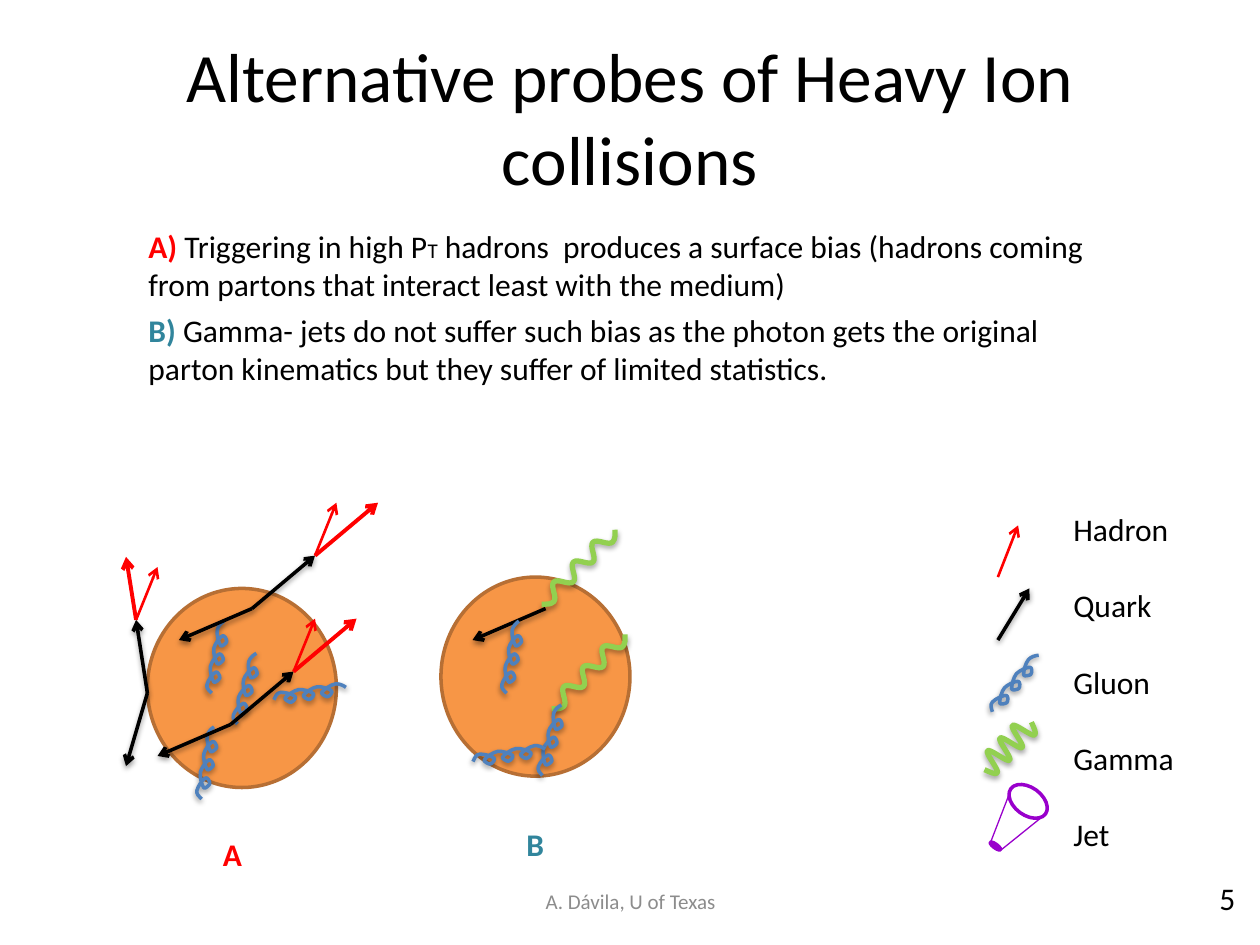
from lxml.etree import SubElement
from pptx import Presentation
from pptx.dml.color import RGBColor
from pptx.enum.shapes import MSO_CONNECTOR, MSO_SHAPE
from pptx.enum.text import MSO_ANCHOR, PP_ALIGN
from pptx.oxml.ns import qn
from pptx.util import Inches, Pt

BLACK = RGBColor(0x00, 0x00, 0x00)
RED = RGBColor(0xFF, 0x00, 0x00)
TEAL = RGBColor(0x31, 0x85, 0x9C)
GRAY = RGBColor(0x8C, 0x8C, 0x8C)
ORANGE = RGBColor(0xF7, 0x96, 0x46)
BROWN = RGBColor(0xB7, 0x6F, 0x34)
BLUE = RGBColor(0x4F, 0x81, 0xBD)
GREEN = RGBColor(0x92, 0xD0, 0x50)
PURPLE = RGBColor(0x99, 0x00, 0xCC)

FONT = "Calibri"
GLUON_LOOPS = 3
LOOP_WIDTH = 0.44 / GLUON_LOOPS
GAMMA_TILT = 314.6
JET_TILT = 36.2


def add_text(shapes, box, paragraphs, align=PP_ALIGN.LEFT,
             anchor=MSO_ANCHOR.TOP, gap=0):
    """Each paragraph is a list of (text, size, colour, bold) runs."""
    frame = shapes.add_textbox(*map(Inches, box)).text_frame
    frame.word_wrap = True
    frame.vertical_anchor = anchor
    for index, runs in enumerate(paragraphs):
        paragraph = frame.paragraphs[0] if index == 0 else frame.add_paragraph()
        paragraph.alignment = align
        if index:
            paragraph.space_before = Pt(gap)
        for text, size, color, bold in runs:
            run = paragraph.add_run()
            run.text = text
            font = run.font
            font.name, font.size, font.bold = FONT, Pt(size), bold
            font.color.rgb = color


def set_shadow(shape, opacity=0, distance=0):
    """Drop a soft shadow straight down, or none at zero opacity."""
    properties = shape._element.spPr
    for old in properties.findall(qn("a:effectLst")):
        properties.remove(old)
    effects = SubElement(properties, qn("a:effectLst"))
    if opacity:
        shadow = SubElement(effects, qn("a:outerShdw"), blurRad=str(Pt(3.1)),
                            dist=str(Pt(distance)), dir="5400000", rotWithShape="0")
        color = SubElement(shadow, qn("a:srgbClr"), val="000000")
        SubElement(color, qn("a:alpha"), val=str(opacity * 1000))


def add_line(shapes, start, end, color, width, arrow=True):
    line = shapes.add_connector(MSO_CONNECTOR.STRAIGHT, *map(Inches, start + end))
    line.line.color.rgb = color
    line.line.width = Pt(width)
    if arrow:
        SubElement(line.line._get_or_add_ln(), qn("a:tailEnd"), type="arrow")
    set_shadow(line)
    return line


def add_quark(shapes, start, end):
    set_shadow(add_line(shapes, start, end, BLACK, 2), 38, 1.6)


def add_hadron(shapes, start, end, width=1.5):
    add_line(shapes, start, end, RED, width)


def add_ellipse(shapes, box, color, fill=None, tilt=0):
    ellipse = shapes.add_shape(MSO_SHAPE.OVAL, *map(Inches, box))
    ellipse.shadow.inherit = False
    ellipse.rotation = tilt
    if fill is None:
        ellipse.fill.background()
    else:
        ellipse.fill.solid()
        ellipse.fill.fore_color.rgb = fill
    ellipse.line.color.rgb = color
    ellipse.line.width = Pt(2)


def add_curve(shapes, center, points, tilt, color, width):
    """Draw a Bezier chain: a start, then two controls and an end per piece."""
    start, *rest = [(Inches(center[0] + x), Inches(center[1] + y)) for x, y in points]
    builder = shapes.build_freeform(*start, scale=1.0)
    builder.add_line_segments(rest, close=False)
    curve = builder.convert_to_shape()
    outline = next(curve._element.iter(qn("a:path")))
    segments = outline.findall(qn("a:lnTo"))
    for first in range(0, len(segments), 3):
        piece = SubElement(outline, qn("a:cubicBezTo"))
        for segment in segments[first:first + 3]:
            piece.append(segment[0])
            outline.remove(segment)
    curve.rotation = tilt
    curve.fill.background()
    curve.line.color.rgb = color
    curve.line.width = Pt(width)
    return curve


def add_gluon(shapes, center, tilt):
    loop = [(0.03, 0), (0.1, 0.03), (0.11, 0.05),
            (0.12, 0.06), (0.09, 0.09), (0.07, 0.09),
            (0.06, 0.09), (0.02, 0.06), (0.03, 0.05),
            (0.05, 0.03), (0.11, 0), (LOOP_WIDTH, 0)]
    points = [(-0.29, 0.01), (-0.27, -0.02), (-0.26, -0.04), (-0.23, -0.04)]
    for turn in range(GLUON_LOOPS):
        left = -0.23 + turn * LOOP_WIDTH
        points += [(left + x, y - 0.04) for x, y in loop]
    points += [(0.24, -0.04), (0.27, -0.02), (0.29, 0)]
    set_shadow(add_curve(shapes, center, points, tilt, BLUE, 2), 38, 1.6)


def add_gamma(shapes, center, length=0.83, height=0.11):
    step, crest = length / 7.5, height / 2
    points = [(-length / 2, 0), (-3.5 * step, crest / 2),
              (-3.3 * step, crest), (-3 * step, crest)]
    for turn in range(-3, 3):
        points += [((turn + 0.4) * step, crest), ((turn + 0.6) * step, -crest),
                   ((turn + 1) * step, -crest)]
        crest = -crest
    points += [(3.3 * step, crest), (3.5 * step, crest / 2), (length / 2, 0)]
    wave = add_curve(shapes, center, points, GAMMA_TILT, GREEN, 3)
    set_shadow(wave, 35, 1.8)


def add_collision_a(shapes):
    add_ellipse(shapes, (1.17, 4.67, 1.5, 1.58), BROWN, ORANGE)
    for center, tilt in (((2.46, 5.5), 351.2), ((1.96, 5.46), 286),
                         ((1.65, 6.05), 280.7), ((1.73, 5.21), 280.7)):
        add_gluon(shapes, center, tilt)
    for x, y in ((2, 4.83), (1.83, 5.75)):
        tip = (x + 0.5, y - 0.42)
        add_quark(shapes, (x, y), tip)
        add_quark(shapes, (x, y), (x - 0.58, y + 0.25))
        add_hadron(shapes, tip, (tip[0] + 0.17, tip[1] - 0.42))
        add_hadron(shapes, tip, (tip[0] + 0.5, tip[1] - 0.42), 2.25)
    edge, tip = (1.17, 5.5), (1.08, 4.92)
    add_quark(shapes, edge, (1, 6.08))
    add_quark(shapes, edge, tip)
    add_hadron(shapes, tip, (1, 4.42), 2.25)
    add_hadron(shapes, tip, (1.25, 4.5))


def add_collision_b(shapes):
    add_ellipse(shapes, (3.5, 4.58, 1.5, 1.58), BROWN, ORANGE)
    add_gamma(shapes, (4.59, 4.5))
    add_gamma(shapes, (4.67, 5.33))
    add_quark(shapes, (4.33, 4.83), (3.75, 5.08))
    for center, tilt in (((4.38, 5.87), 286), ((4.07, 5.21), 280.7),
                         ((4.04, 5.99), 351.2)):
        add_gluon(shapes, center, tilt)


def add_jet(shapes):
    add_ellipse(shapes, (7.99, 6.25, 0.34, 0.22), PURPLE, tilt=JET_TILT)
    add_ellipse(shapes, (7.85, 6.7, 0.1, 0.03), PURPLE, tilt=JET_TILT)
    add_line(shapes, (7.94, 6.75), (8.3, 6.46), PURPLE, 0.75, arrow=False)
    add_line(shapes, (7.86, 6.69), (8.03, 6.25), PURPLE, 0.75, arrow=False)


def add_legend(shapes):
    add_hadron(shapes, (7.92, 4.58), (8.08, 4.17))
    add_quark(shapes, (7.92, 5.08), (8.17, 4.67))
    add_gluon(shapes, (8.06, 5.42), 310.3)
    add_gamma(shapes, (8, 5.92), length=0.53, height=0.18)
    add_jet(shapes.add_group_shape().shapes)
    labels = ("Hadron", "Quark", "Gluon", "Gamma", "Jet")
    add_text(shapes, (8.42, 4, 1.25, 2.83),
             [[(label, 18, BLACK, False)] for label in labels], gap=22)


def main():
    deck = Presentation()
    deck.slide_width, deck.slide_height = Inches(10), Inches(7.5)
    shapes = deck.slides.add_slide(deck.slide_layouts[6]).shapes

    add_text(shapes, (0.5, 0.3, 9, 1.25),
             [[("Alternative probes of Heavy Ion collisions", 39.6, BLACK, False)]],
             PP_ALIGN.CENTER, MSO_ANCHOR.MIDDLE)
    add_text(shapes, (1.08, 1.75, 7.67, 0.71), [[
        ("A) ", 18, RED, True),
        ("Triggering in high P", 18, BLACK, False),
        ("T", 12, BLACK, False),
        (" hadrons  produces a surface bias (hadrons coming from partons "
         "that interact least with the medium)", 18, BLACK, False)]])
    add_text(shapes, (1.08, 2.42, 7.58, 0.71), [[
        ("B) ", 18, TEAL, True),
        ("Gamma- jets do not suffer such bias as the photon gets the original "
         "parton kinematics but they suffer of limited statistics.",
         18, BLACK, False)]])

    add_collision_b(shapes.add_group_shape().shapes)
    add_collision_a(shapes.add_group_shape().shapes)
    add_text(shapes, (1.67, 6.58, 0.83, 0.4), [[("A", 18, RED, True)]])
    add_text(shapes, (4.08, 6.5, 0.83, 0.4), [[("B", 18, TEAL, True)]])
    add_legend(shapes)

    add_text(shapes, (3.42, 6.95, 3.17, 0.4),
             [[("A. Dávila, U of Texas", 12, GRAY, False)]],
             PP_ALIGN.CENTER, MSO_ANCHOR.MIDDLE)
    add_text(shapes, (9.58, 6.93, 0.25, 0.4), [[("5", 18, BLACK, False)]])
    deck.save("out.pptx")


if __name__ == "__main__":
    main()
